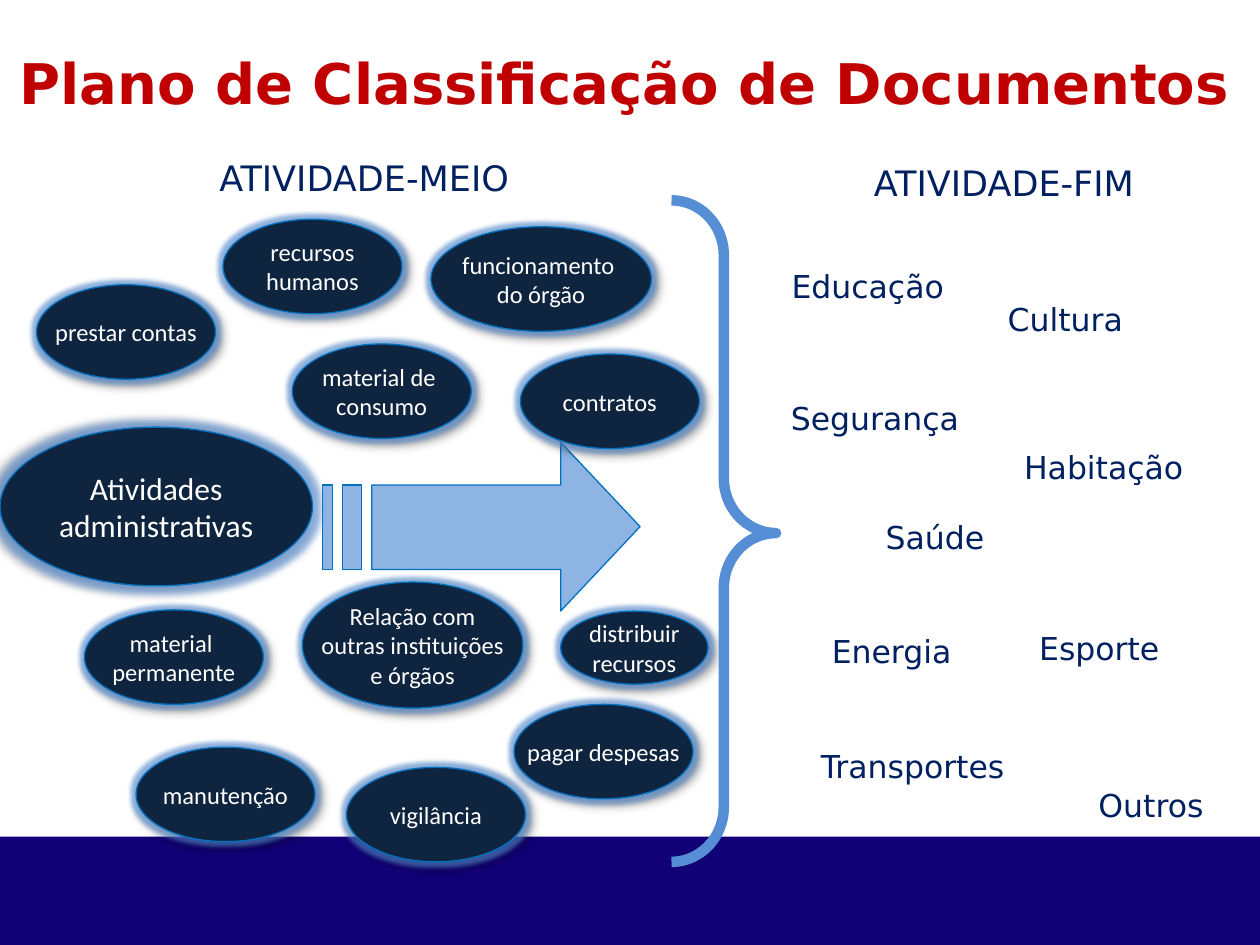
from lxml import etree
from pptx import Presentation, util as u
from pptx.dml.color import RGBColor
from pptx.enum import shapes, text
from pptx.oxml import ns

THEME = {
    "body": "Calibri", "heading": "DejaVu Sans",
    "band": "110076", "ellipse": "0F243E", "outline": "0070C0",
    "arrow": "8EB4E3", "brace": "558ED5", "white": "FFFFFF",
    "title": "C00000", "label": "002060", "shadow": "000000",
    "title_size": 32, "column_size": 20, "label_size": 18, "main_size": 18, "support_size": 14,
}

TITLE = ("Plano de Classificação de Documentos", 0, 0.26, 9.92, 0.71)
COLUMNS = [("ATIVIDADE-MEIO", 1.38, 1.19), ("ATIVIDADE-FIM", 6.34, 1.23)]
COLUMN_BOX = (2.76, 0.44)
MAIN_ACTIVITY = (["Atividades administrativas"], 0, 3.39, 2.48, 1.26)

STANDARD = (1.42, 0.75)
SUPPORT_ACTIVITIES = [  # lines, left, top, (width, height)
    (["recursos", "humanos"], 1.77, 1.74, STANDARD),
    (["funcionamento ", "do órgão"], 3.42, 1.8, (1.75, 0.83)),
    (["contratos"], 4.13, 2.81, STANDARD),
    (["Relação com", "outras instituições", "e órgãos"], 2.4, 4.62, (1.75, 1)),
    (["material de ", "consumo"], 2.32, 2.73, STANDARD),
    (["material ", "permanente"], 0.67, 4.84, STANDARD),
    (["distribuir", "recursos"], 4.45, 4.85, (1.17, 0.58)),
    (["manutenção"], 1.08, 5.93, STANDARD),
    (["prestar contas"], 0.29, 2.26, STANDARD),
    (["pagar despesas"], 4.08, 5.59, STANDARD),
    (["vigilância"], 2.75, 6.09, STANDARD),
]
CORE_ACTIVITIES = [  # name, left, top, width
    ("Educação", 6.02, 2.07, 1.57), ("Cultura", 7.44, 2.33, 1.57),
    ("Segurança", 5.74, 3.12, 1.97), ("Saúde", 6.34, 4.06, 1.57),
    ("Energia", 6.08, 4.97, 1.57), ("Habitação", 6.89, 3.51, 2.6),
    ("Transportes", 6.02, 5.88, 2.05), ("Outros", 7.6, 6.19, 2.05),
    ("Esporte", 7.73, 4.94, 1.57),
]
LABEL_HEIGHT = 0.4

ARROW_TOP, SHAFT_TOP, SHAFT_BOTTOM, ARROW_BOTTOM = 3.51, 3.85, 4.52, 4.85
SHAFT_LEFT, HEAD_LEFT, ARROW_TIP = 2.95, 4.45, 5.08
STRIPES = [(2.72, 2.87), (2.56, 2.64)]


def color(name):
    return RGBColor.from_string(THEME[name])


def inches(*values):
    return [u.Inches(value) for value in values]


def paint(shape, fill=None, line=None, line_width=0.75):
    shape.shadow.inherit = False
    if fill:
        shape.fill.solid()
        shape.fill.fore_color.rgb = color(fill)
    else:
        shape.fill.background()
    if line:
        shape.line.color.rgb = color(line)
        shape.line.width = u.Pt(line_width)
    else:
        shape.line.fill.background()


def write(frame, lines, font_name, size, font_color, align, bold=False):
    frame.text = "\n".join(lines)
    for paragraph in frame.paragraphs:
        paragraph.alignment = align
        font = paragraph.font
        font.name = THEME[font_name]
        font.size = u.Pt(THEME[size])
        font.color.rgb = color(font_color)
        font.bold = bold


def add_effects(shape, glow_points, shadow_angle):
    """Give the shape a soft glow and an outer shadow."""
    effects = shape._element.spPr.find(ns.qn("a:effectLst"))

    def effect(tag, color_name, alpha, **attributes):
        node = etree.SubElement(effects, ns.qn(tag), {k: str(v) for k, v in attributes.items()})
        tint = etree.SubElement(node, ns.qn("a:srgbClr"), val=THEME[color_name])
        etree.SubElement(tint, ns.qn("a:alpha"), val=str(alpha * 1000))

    effect("a:glow", "brace", 60, rad=u.Pt(glow_points))
    effect("a:outerShdw", "shadow", 40, blurRad=u.Pt(4), dist=u.Pt(3),
           dir=shadow_angle * 60000, algn="tl", rotWithShape=0)


def add_ellipse(slide, lines, left, top, width, height, size, wrap, glow, angle):
    ellipse = slide.shapes.add_shape(shapes.MSO_SHAPE.OVAL, *inches(left, top, width, height))
    paint(ellipse, "ellipse", "outline")
    add_effects(ellipse, glow, angle)
    frame = ellipse.text_frame
    frame.word_wrap = wrap
    frame.vertical_anchor = text.MSO_ANCHOR.MIDDLE
    write(frame, lines, "body", size, "white", text.PP_ALIGN.CENTER)


def add_label(slide, words, left, top, width, height, size,
              font_color="label", align=text.PP_ALIGN.RIGHT, bold=False):
    frame = slide.shapes.add_textbox(*inches(left, top, width, height)).text_frame
    frame.word_wrap = True
    frame.auto_size = text.MSO_AUTO_SIZE.SHAPE_TO_FIT_TEXT
    write(frame, [words], "heading", size, font_color, align, bold)
    return frame


def add_striped_arrow(slide):
    middle = (ARROW_TOP + ARROW_BOTTOM) / 2
    outlines = [[(HEAD_LEFT, ARROW_TOP), (HEAD_LEFT, SHAFT_TOP), (SHAFT_LEFT, SHAFT_TOP),
                 (SHAFT_LEFT, SHAFT_BOTTOM), (HEAD_LEFT, SHAFT_BOTTOM),
                 (HEAD_LEFT, ARROW_BOTTOM), (ARROW_TIP, middle)]]
    outlines += [[(left, SHAFT_TOP), (left, SHAFT_BOTTOM), (right, SHAFT_BOTTOM), (right, SHAFT_TOP)]
                 for left, right in STRIPES]
    points = [[inches(*point) for point in outline] for outline in outlines]
    builder = slide.shapes.build_freeform(*points[0][0])
    for index, (start, *rest) in enumerate(points):
        if index:
            builder.move_to(*start)
        builder.add_line_segments(rest, close=True)
    paint(builder.convert_to_shape(), "arrow", "outline")


def main():
    presentation = Presentation()
    presentation.slide_width, presentation.slide_height = inches(10, 7.5)
    slide = presentation.slides.add_slide(presentation.slide_layouts[6])

    band = slide.shapes.add_shape(shapes.MSO_SHAPE.RECTANGLE, *inches(0, 6.64, 10, 0.86))
    paint(band, "band")
    add_striped_arrow(slide)

    for lines, left, top, box in SUPPORT_ACTIVITIES:
        add_ellipse(slide, lines, left, top, *box, "support_size", wrap=False, glow=5, angle=45)

    brace = slide.shapes.add_shape(shapes.MSO_SHAPE.RIGHT_BRACE, *inches(5.33, 1.59, 0.83, 5.25))
    brace.adjustments[0], brace.adjustments[1] = 0.525, 0.503
    paint(brace, line="brace", line_width=6)

    add_ellipse(slide, *MAIN_ACTIVITY, "main_size", wrap=True, glow=8, angle=180)

    for name, left, top, width in CORE_ACTIVITIES:
        add_label(slide, name, left, top, width, LABEL_HEIGHT, "label_size")
    title = add_label(slide, *TITLE, "title_size", "title", text.PP_ALIGN.CENTER, bold=True)
    title.paragraphs[0].line_spacing = 1.14
    for name, left, top in COLUMNS:
        add_label(slide, name, left, top, *COLUMN_BOX, "column_size")

    presentation.save("out.pptx")


if __name__ == "__main__":
    main()
